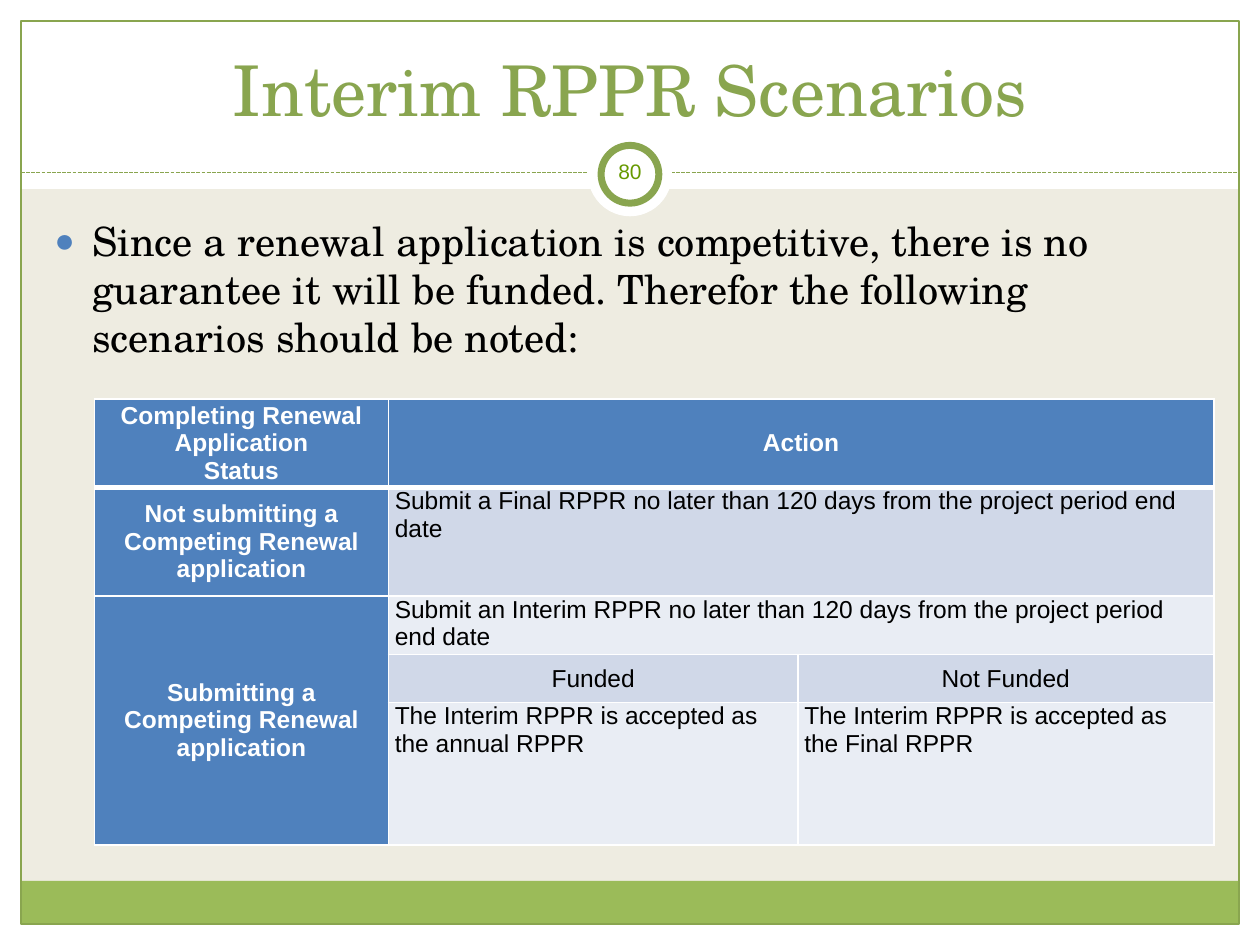
from dataclasses import dataclass

from lxml import etree
from pptx import Presentation
from pptx.dml.color import RGBColor
from pptx.enum.dml import MSO_LINE
from pptx.enum.shapes import MSO_CONNECTOR, MSO_SHAPE
from pptx.enum.text import MSO_ANCHOR, PP_ALIGN
from pptx.oxml.ns import qn
from pptx.util import Pt

RECTANGLE, OVAL = MSO_SHAPE.RECTANGLE, MSO_SHAPE.OVAL
STRAIGHT = MSO_CONNECTOR.STRAIGHT
SHORT_DASH = MSO_LINE.SQUARE_DOT
CENTER, LEFT = PP_ALIGN.CENTER, PP_ALIGN.LEFT
TOP, MIDDLE, BOTTOM = MSO_ANCHOR.TOP, MSO_ANCHOR.MIDDLE, MSO_ANCHOR.BOTTOM

WHITE, BLACK, BEIGE = "FFFFFF", "000000", "EEECE1"
GREEN, OLIVE, NUMBER_GREEN = "9BBB59", "89A54F", "669900"
BLUE, PALE_BLUE, PALER_BLUE = "4F81BD", "D0D8E8", "E9EDF4"
SERIF, SANS = "TeX Gyre Schola", "Arial"

PAGE_WIDTH, PAGE_HEIGHT, MARGIN = 720, 540, 12
RULE_TOP = 98.6
COLUMN_WIDTHS = (168, 234, 237.6)
ROW_HEIGHTS = (45.4, 62, 30.2, 27.4, 81.4)


@dataclass
class Panel:
    left: float
    top: float
    width: float
    height: float
    fill: str | None = WHITE
    line: str | None = None
    line_width: float = 0.75
    kind: int = RECTANGLE


@dataclass
class TableEntry:
    row: int
    column: int
    lines: tuple[str, ...]
    fill: str
    heading: bool = False
    centered: bool = False
    last_row: int | None = None
    last_column: int | None = None


def color(value: str) -> RGBColor:
    return RGBColor.from_string(value)


def set_font(font, name: str, size: float, ink: str, bold: bool = False) -> None:
    for attribute, value in {"name": name, "size": Pt(size), "bold": bold}.items():
        setattr(font, attribute, value)
    font.color.rgb = color(ink)


def add_panel(page, panel: Panel) -> None:
    shape = page.shapes.add_shape(
        panel.kind, Pt(panel.left), Pt(panel.top), Pt(panel.width), Pt(panel.height))
    shape.shadow.inherit = False
    if panel.fill:
        shape.fill.solid()
        shape.fill.fore_color.rgb = color(panel.fill)
    else:
        shape.fill.background()
    if panel.line:
        shape.line.color.rgb = color(panel.line)
        shape.line.width = Pt(panel.line_width)
    else:
        shape.line.fill.background()


def centered_circle(diameter: float, line: str | None = None, line_width: float = 0.75) -> Panel:
    """Describe a white circle centred on the rule."""
    return Panel((PAGE_WIDTH - diameter) / 2, RULE_TOP + 1 - diameter / 2, diameter, diameter,
                 WHITE, line, line_width, OVAL)


def add_rule(page) -> None:
    rule = page.shapes.add_connector(
        STRAIGHT, Pt(MARGIN), Pt(RULE_TOP), Pt(PAGE_WIDTH - MARGIN), Pt(RULE_TOP))
    rule.line.color.rgb = color(OLIVE)
    rule.line.width = Pt(0.75)
    rule.line.dash_style = SHORT_DASH
    etree.SubElement(rule._element.spPr, qn("a:effectLst"))


def add_text(page, place: tuple[float, float, float, float], text: str, name: str,
             size: float, ink: str, align=CENTER, anchor=TOP, bullet: bool = False) -> None:
    box = page.shapes.add_textbox(*(Pt(length) for length in place))
    frame = box.text_frame
    frame.word_wrap = True
    frame.vertical_anchor = anchor
    para = frame.paragraphs[0]
    para.alignment = align
    if bullet:
        add_bullet(para)
    span = para.add_run()
    span.text = text
    set_font(span.font, name, size, ink)


def add_bullet(para) -> None:
    properties = para._p.get_or_add_pPr()
    properties.set("marL", str(Pt(21.6)))
    properties.set("indent", str(-Pt(21.6)))
    bullet_color = etree.SubElement(properties, qn("a:buClr"))
    etree.SubElement(bullet_color, qn("a:srgbClr"), val=BLUE)
    etree.SubElement(properties, qn("a:buSzPct"), val="85000")
    etree.SubElement(properties, qn("a:buFont"), typeface=SANS)
    etree.SubElement(properties, qn("a:buChar"), char="●")


def set_borders(cell, top: float, bottom: float) -> None:
    properties = cell._tc.get_or_add_tcPr()
    widths = {"a:lnL": 1, "a:lnR": 1, "a:lnT": top, "a:lnB": bottom}
    for position, (tag, width) in enumerate(widths.items()):
        border = etree.Element(qn(tag), w=str(Pt(width)))
        solid = etree.SubElement(border, qn("a:solidFill"))
        etree.SubElement(solid, qn("a:srgbClr"), val=WHITE)
        properties.insert(position, border)


def fill_cell(table, entry: TableEntry) -> None:
    cell = table.cell(entry.row, entry.column)
    last_row = entry.last_row or entry.row
    last_column = entry.last_column or entry.column
    if (last_row, last_column) != (entry.row, entry.column):
        cell.merge(table.cell(last_row, last_column))
    centered = entry.heading or entry.centered
    cell.vertical_anchor = MIDDLE if centered else TOP
    frame = cell.text_frame
    for index, text in enumerate(entry.lines):
        para = frame.add_paragraph() if index else frame.paragraphs[0]
        para.alignment = CENTER if centered else LEFT
        span = para.add_run()
        span.text = text
        set_font(span.font, SANS, 14, WHITE if entry.heading else BLACK, entry.heading)
    for row in range(entry.row, last_row + 1):
        for column in range(entry.column, last_column + 1):
            part = table.cell(row, column)
            margins = {"margin_left": 3.6, "margin_right": 3.6, "margin_top": 0, "margin_bottom": 0}
            for attribute, value in margins.items():
                setattr(part, attribute, Pt(value))
            part.fill.solid()
            part.fill.fore_color.rgb = color(entry.fill)
            set_borders(part, 3 if row == 1 else 1, 3 if row == 0 else 1)


def add_scenario_table(page, entries: list[TableEntry]) -> None:
    table = page.shapes.add_table(
        len(ROW_HEIGHTS), len(COLUMN_WIDTHS), Pt(54), Pt(228),
        Pt(sum(COLUMN_WIDTHS)), Pt(sum(ROW_HEIGHTS))).table
    table.first_row = table.horz_banding = False
    for column, width in zip(table.columns, COLUMN_WIDTHS):
        column.width = Pt(width)
    for row, height in zip(table.rows, ROW_HEIGHTS):
        row.height = Pt(height)
    for entry in entries:
        fill_cell(table, entry)


PANELS = [
    Panel(0, PAGE_HEIGHT - MARGIN, PAGE_WIDTH, MARGIN),
    Panel(0, 0, PAGE_WIDTH, 108),
    Panel(0, 0, MARGIN, PAGE_HEIGHT),
    Panel(PAGE_WIDTH - MARGIN, 0, MARGIN, PAGE_HEIGHT),
    Panel(MARGIN, 503.3, PAGE_WIDTH - 2 * MARGIN, 24.7, GREEN),
    Panel(MARGIN, MARGIN, PAGE_WIDTH - 2 * MARGIN, PAGE_HEIGHT - 2 * MARGIN, None, OLIVE),
]
CIRCLES = [centered_circle(48), centered_circle(33, OLIVE, 4)]
ENTRIES = [
    TableEntry(0, 0, ("Completing Renewal Application", "Status"), BLUE, heading=True),
    TableEntry(0, 1, ("Action",), BLUE, heading=True, last_column=2),
    TableEntry(1, 0, ("Not submitting a Competing Renewal application",), BLUE, heading=True),
    TableEntry(1, 1, ("Submit a Final RPPR no later than 120 days from the project period end date",),
               PALE_BLUE, last_column=2),
    TableEntry(2, 0, ("Submitting a Competing Renewal application",), BLUE, heading=True, last_row=4),
    TableEntry(2, 1, ("Submit an Interim RPPR no later than 120 days from the project period end date",),
               PALER_BLUE, last_column=2),
    TableEntry(3, 1, ("Funded",), PALE_BLUE, centered=True),
    TableEntry(3, 2, ("Not Funded",), PALE_BLUE, centered=True),
    TableEntry(4, 1, ("The Interim RPPR is accepted as the annual RPPR",), PALER_BLUE),
    TableEntry(4, 2, ("The Interim RPPR is accepted as the Final RPPR",), PALER_BLUE),
]

deck = Presentation()
deck.slide_width, deck.slide_height = Pt(PAGE_WIDTH), Pt(PAGE_HEIGHT)
page = deck.slides.add_slide(deck.slide_layouts[6])
page.background.fill.solid()
page.background.fill.fore_color.rgb = color(BEIGE)
for panel in PANELS:
    add_panel(page, panel)
add_rule(page)
for circle in CIRCLES:
    add_panel(page, circle)
add_text(page, (342, 87, 36, 21.6), "80", SANS, 12, NUMBER_GREEN)
add_text(page, (24, 18, 672, 60), "Interim RPPR Scenarios", SERIF, 40, OLIVE, anchor=BOTTOM)
add_text(page, (24, 120, 669.6, 360),
         "Since a renewal application is competitive, there is no guarantee it will be funded. "
         "Therefor the following scenarios should be noted:",
         SERIF, 23, BLACK, align=LEFT, bullet=True)
add_scenario_table(page, ENTRIES)
deck.save("out.pptx")
